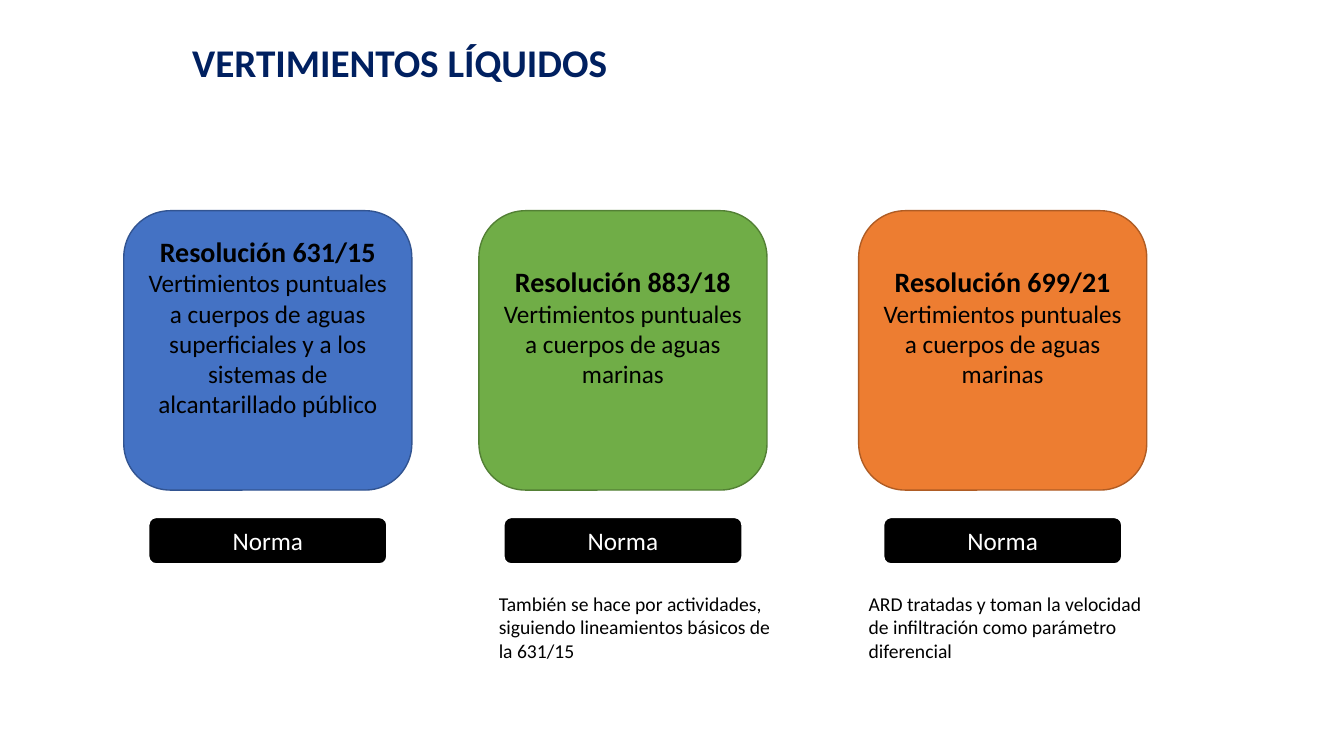
from dataclasses import dataclass

from pptx import Presentation
from pptx.dml.color import RGBColor
from pptx.enum.shapes import MSO_SHAPE as Shape
from pptx.enum.text import MSO_ANCHOR as Anchor, MSO_AUTO_SIZE as AutoSize, PP_ALIGN as Align
from pptx.util import Cm, Pt


@dataclass(frozen=True)
class Theme:
    font: str = "Calibri"
    navy: str = "002060"
    black: str = "000000"
    white: str = "FFFFFF"
    blue: tuple = ("4472C4", "325491")
    green: tuple = ("70AD47", "538035")
    orange: tuple = ("ED7D31", "AF5C24")
    title_size: int = 28
    heading_size: int = 20
    body_size: int = 18
    note_size: int = 14


THEME = Theme()
CARD_TOP, CARD_WIDTH, CARD_HEIGHT = 5.31, 7.26, 7.04
LABEL_TOP, LABEL_WIDTH, LABEL_HEIGHT = 13.03, 6.02, 1.19
NOTE_TOP, NOTE_WIDTH, NOTE_HEIGHT = 14.78, 7.39, 2.06

RESOLUTIONS = [
    (3.12, THEME.blue, "Resolución 631/15",
     "Vertimientos puntuales a cuerpos de aguas superficiales "
     "y a los sistemas de alcantarillado público"),
    (12.07, THEME.green, "Resolución 883/18",
     "Vertimientos puntuales a cuerpos de aguas marinas"),
    (21.64, THEME.orange, "Resolución 699/21",
     "Vertimientos puntuales a cuerpos de aguas marinas"),
]
NOTES = [
    (12.32, "También se hace por actividades, siguiendo lineamientos básicos de la 631/15"),
    (21.64, "ARD tratadas y toman la velocidad de infiltración como parámetro diferencial"),
]


def write(paragraph, text, size, color, bold=False, align=Align.CENTER):
    paragraph.text = text
    paragraph.alignment = align
    font = paragraph.font
    font.name = THEME.font
    font.size = Pt(size)
    font.bold = bold
    font.color.rgb = RGBColor.from_string(color)


def add_title(slide, text):
    title = slide.shapes.title
    title.left, title.top, title.width, title.height = Cm(-1.4), Cm(0.56), Cm(22.94), Cm(1.98)
    frame = title.text_frame
    frame.vertical_anchor = Anchor.MIDDLE
    frame.auto_size = AutoSize.NONE
    write(frame.paragraphs[0], text, THEME.title_size, THEME.navy, bold=True)


def add_rounded_box(slide, left, top, width, height, fill, outline, outline_width):
    box = slide.shapes.add_shape(Shape.ROUNDED_RECTANGLE, Cm(left), Cm(top), Cm(width), Cm(height))
    box.shadow.inherit = False
    box.fill.solid()
    box.fill.fore_color.rgb = RGBColor.from_string(fill)
    box.line.color.rgb = RGBColor.from_string(outline)
    box.line.width = Pt(outline_width)
    frame = box.text_frame
    frame.word_wrap = True
    frame.vertical_anchor = Anchor.MIDDLE
    return frame


def add_card(slide, left, colors, heading, scope):
    frame = add_rounded_box(slide, left, CARD_TOP, CARD_WIDTH, CARD_HEIGHT, *colors, 1)
    frame.margin_bottom = Cm(1.33)
    write(frame.paragraphs[0], heading, THEME.heading_size, THEME.black, bold=True)
    write(frame.add_paragraph(), scope, THEME.body_size, THEME.black)


def add_label(slide, card_left, text):
    left = card_left + (CARD_WIDTH - LABEL_WIDTH) / 2
    frame = add_rounded_box(slide, left, LABEL_TOP, LABEL_WIDTH, LABEL_HEIGHT,
                            THEME.black, THEME.white, 1.5)
    write(frame.paragraphs[0], text, THEME.body_size, THEME.white)


def add_note(slide, left, text):
    note = slide.shapes.add_textbox(Cm(left), Cm(NOTE_TOP), Cm(NOTE_WIDTH), Cm(NOTE_HEIGHT))
    frame = note.text_frame
    frame.word_wrap = True
    frame.auto_size = AutoSize.SHAPE_TO_FIT_TEXT
    write(frame.paragraphs[0], text, THEME.note_size, THEME.black, align=Align.LEFT)


def main():
    deck = Presentation()
    deck.slide_width, deck.slide_height = Cm(33.87), Cm(19.05)
    slide = deck.slides.add_slide(deck.slide_layouts[5])
    add_title(slide, "VERTIMIENTOS LÍQUIDOS")
    for left, colors, heading, scope in RESOLUTIONS:
        add_card(slide, left, colors, heading, scope)
        add_label(slide, left, "Norma")
    for left, text in NOTES:
        add_note(slide, left, text)
    deck.save("out.pptx")


if __name__ == "__main__":
    main()
